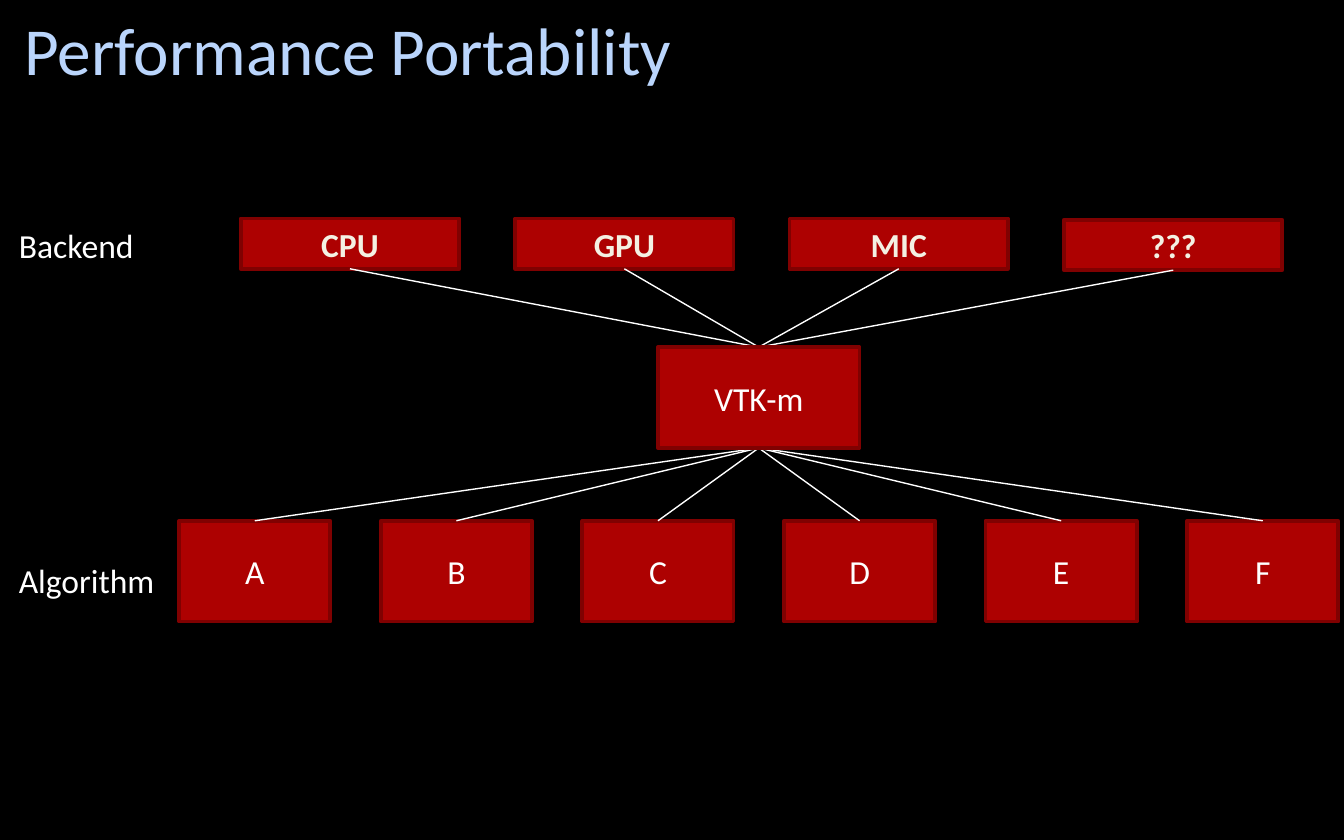
from pptx import Presentation
from pptx.dml.color import RGBColor
from pptx.enum.shapes import MSO_CONNECTOR, MSO_SHAPE
from pptx.enum.text import MSO_ANCHOR, PP_ALIGN
from pptx.oxml.ns import qn
from pptx.util import Pt
from lxml import etree

PX = 9525  # EMU per px, 96 px to the inch
RECTANGLE = MSO_SHAPE.RECTANGLE
STRAIGHT = MSO_CONNECTOR.STRAIGHT
TOP, MIDDLE = MSO_ANCHOR.TOP, MSO_ANCHOR.MIDDLE
LEFT, CENTER = PP_ALIGN.LEFT, PP_ALIGN.CENTER
TOP_SITE, BOTTOM_SITE = 0, 2
TITLE_ONLY = 5
FONT = "Calibri"
COLORS = {
    "background": "000000",
    "title": "BAD5FC",
    "box": "AD0101",
    "border": "800101",
    "cream": "F4F1E3",
    "white": "FFFFFF",
}


def color(name):
    return RGBColor.from_string(COLORS[name])


def emu(*lengths):
    return [length * PX for length in lengths]


def write(shape, text, size=18, ink="white", bold=False, align=LEFT, anchor=TOP):
    frame = shape.text_frame
    frame.word_wrap = True
    frame.vertical_anchor = anchor
    paragraph = frame.paragraphs[0]
    paragraph.alignment = align
    run = paragraph.add_run()
    run.text = text
    run.font.name = FONT
    run.font.size = Pt(size)
    run.font.bold = bold
    run.font.color.rgb = color(ink)


def add_title(slide, text, left, top, width, height):
    title = slide.shapes.title
    title.left, title.top, title.width, title.height = emu(left, top, width, height)
    write(title, text, size=36, ink="title", anchor=MIDDLE)


def add_label(slide, text, left, top, width, height):
    write(slide.shapes.add_textbox(*emu(left, top, width, height)), text)


def add_box(slide, text, left, top, width, height, **text_format):
    box = slide.shapes.add_shape(RECTANGLE, *emu(left, top, width, height))
    box.shadow.inherit = False
    box.fill.solid()
    box.fill.fore_color.rgb = color("box")
    box.line.color.rgb = color("border")
    box.line.width = Pt(2)
    write(box, text, align=CENTER, anchor=MIDDLE, **text_format)
    return box


def add_row(slide, names, left, tops, width, height, pitch, **text_format):
    """Place equally spaced boxes, each with its own top."""
    return [
        add_box(slide, name, left + i * pitch, top, width, height, **text_format)
        for i, (name, top) in enumerate(zip(names, tops))
    ]


def link(slide, upper, lower):
    """Join the bottom of the upper box to the top of the lower one."""
    line = slide.shapes.add_connector(STRAIGHT, 0, 0, 0, 0)
    line.begin_connect(upper, BOTTOM_SITE)
    line.end_connect(lower, TOP_SITE)
    line.line.color.rgb = color("white")
    line.line.width = Pt(0.75)
    etree.SubElement(line._element.spPr, qn("a:effectLst"))


def add_diagram(slide, left, top):
    """Link the backends and the algorithms through the hub."""
    add_label(slide, "Backend", left, top, 168, 38)
    add_label(slide, "Algorithm", left, top + 239, 152, 38)
    backends = add_row(
        slide, ["CPU", "GPU", "MIC", "???"], left + 168,
        [top, top, top, top + 1], 156, 36, 196, ink="cream", bold=True,
    )
    algorithms = add_row(
        slide, "ABCDEF", left + 124, [top + 216] * 6, 108, 72, 144,
    )
    hub = add_box(slide, "VTK-m", left + 466, top + 92, 144, 72)
    for backend in backends:
        link(slide, backend, hub)
    for algorithm in algorithms:
        link(slide, hub, algorithm)
    slide.shapes._spTree.append(hub._element)  # the hub covers the line ends


def main():
    deck = Presentation()
    deck.slide_width, deck.slide_height = emu(960, 600)
    slide = deck.slides.add_slide(deck.slide_layouts[TITLE_ONLY])
    slide.background.fill.solid()
    slide.background.fill.fore_color.rgb = color("background")
    add_title(slide, "Performance Portability", 8, 0, 848, 69)
    add_diagram(slide, 4, 156)
    deck.save("out.pptx")


if __name__ == "__main__":
    main()
